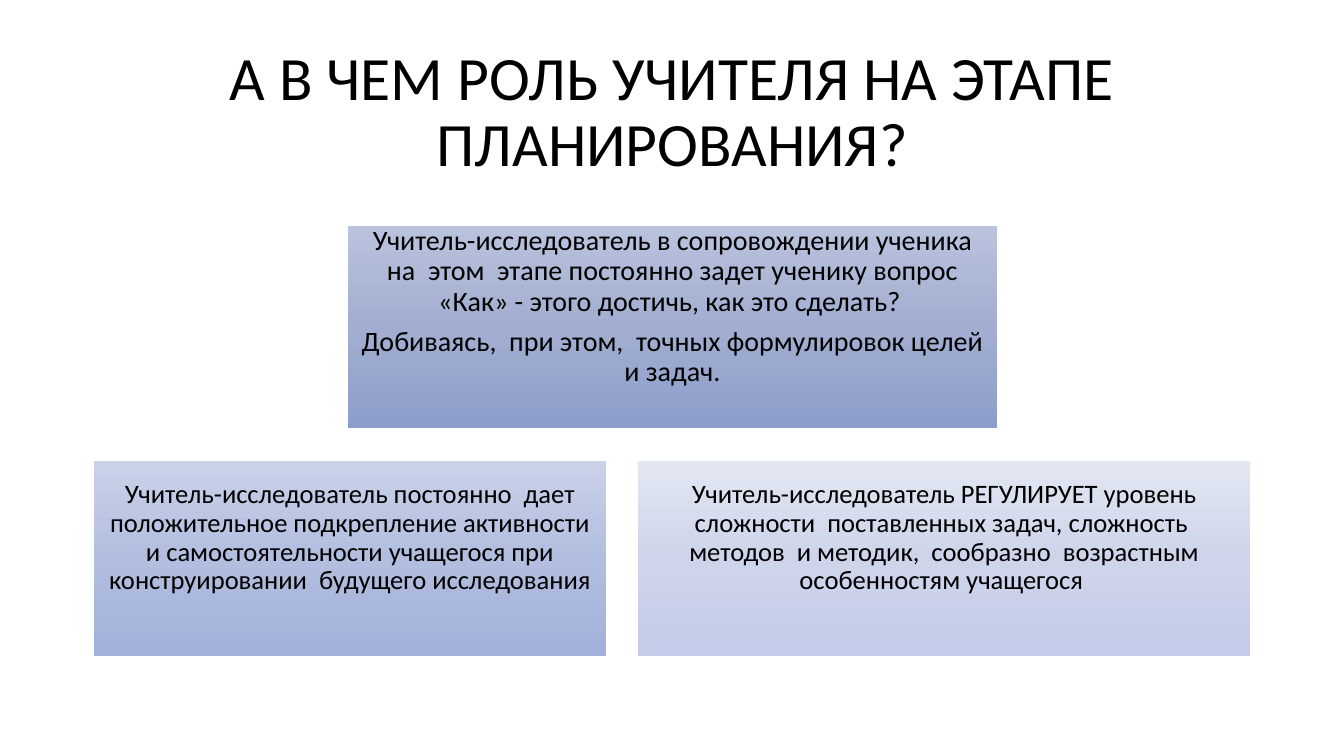
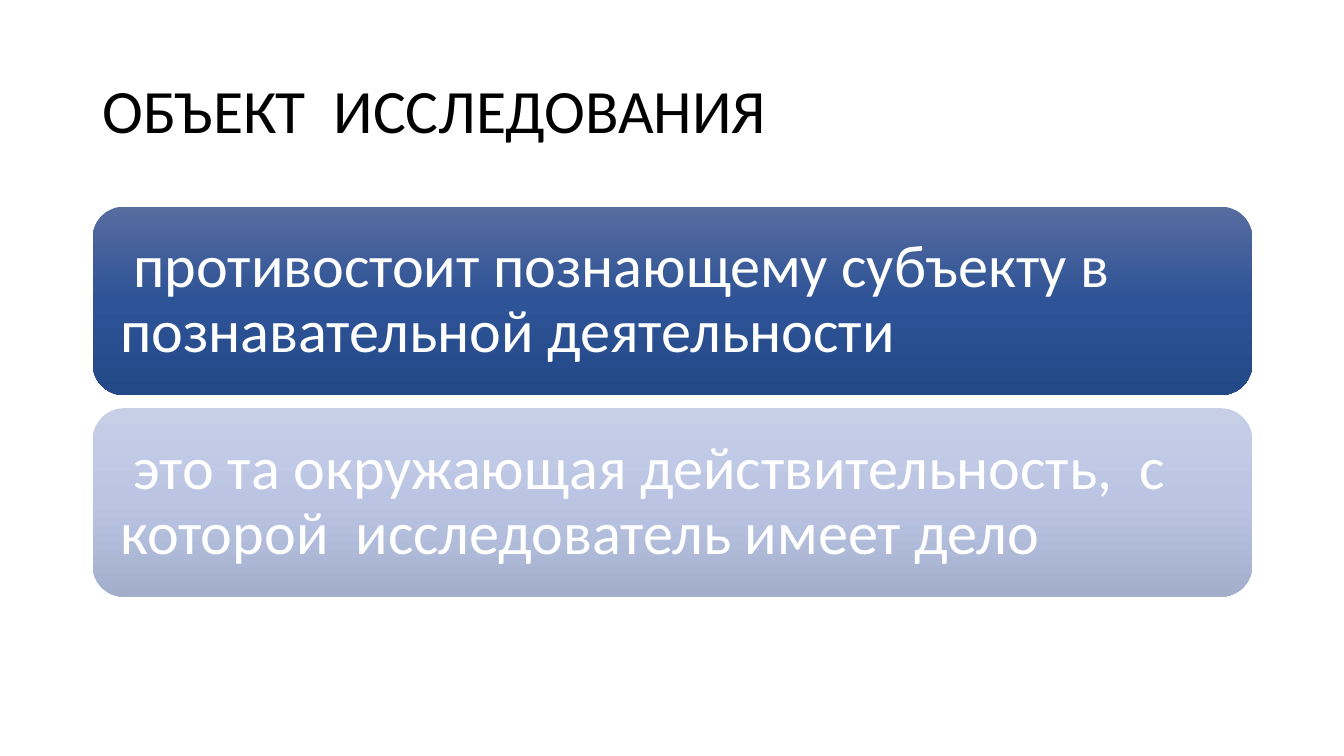
from copy import deepcopy
from dataclasses import dataclass

from pptx import Presentation
from pptx.dml.color import RGBColor
from pptx.enum.shapes import MSO_SHAPE
from pptx.enum.text import MSO_ANCHOR, MSO_AUTO_SIZE, PP_ALIGN
from pptx.oxml.ns import qn
from pptx.util import Inches, Pt

FONT = "Calibri"
COLORS = {"dark": "000000", "light": "FFFFFF"}
# Top, middle and bottom colour of each panel
GRADIENTS = {
    "question": ("BAC3DD", "A2AED1", "8D9ECC"),
    "support": ("CAD2E9", "B2BEDF", "A2B1DB"),
    "level": ("E3E7F3", "CED5EA", "C3CCE8"),
    "opposes": ("576C9F", "2E5396", "244989"),
    "reality": ("C7CFE7", "BBC5E3", "A3AECD"),
}
FRAME = {
    "word_wrap": True,
    "auto_size": MSO_AUTO_SIZE.NONE,
    "vertical_anchor": MSO_ANCHOR.MIDDLE,
}


@dataclass(frozen=True)
class PanelStyle:
    outline: MSO_SHAPE
    align: PP_ALIGN
    color: str
    insets: tuple[float, float, float, float]  # left, top, right, bottom


@dataclass(frozen=True)
class Panel:
    box: tuple[float, float, float, float]
    gradient: str
    size: int
    paragraphs: tuple[str, ...]


ROLE = PanelStyle(MSO_SHAPE.RECTANGLE, PP_ALIGN.CENTER, "dark", (0.08, 0, 0.08, 0.4))
DEFINITION = PanelStyle(MSO_SHAPE.ROUNDED_RECTANGLE, PP_ALIGN.LEFT, "light", (0.18,) * 4)

ROLE_PANELS = (
    Panel((3.45, 2.24, 6.44, 2.01), "question", 20, (
        "Учитель-исследователь в сопровождении ученика на  этом  этапе постоянно "
        "задет ученику вопрос «Как» - этого достичь, как это сделать? ",
        "Добиваясь,  при этом,  точных формулировок целей и задач.",
    )),
    Panel((0.93, 4.57, 5.08, 1.94), "support", 19, (
        "Учитель-исследователь постоянно  дает положительное подкрепление активности "
        "и самостоятельности учащегося при конструировании  будущего исследования",
    )),
    Panel((6.33, 4.57, 6.07, 1.94), "level", 19, (
        "Учитель-исследователь РЕГУЛИРУЕТ уровень сложности  поставленных задач, "
        "сложность  методов  и методик,  сообразно  возрастным особенностям учащегося ",
    )),
)

DEFINITIONS = (
    ("opposes", " противостоит познающему субъекту в познавательной деятельности"),
    ("reality", " это та окружающая действительность,  с которой  исследователь имеет дело"),
)
DEFINITION_TOP, DEFINITION_STEP = 2.05, 2.0
DEFINITION_PANELS = tuple(
    Panel((0.92, DEFINITION_TOP + i * DEFINITION_STEP, 11.5, 1.87), gradient, 43, (text,))
    for i, (gradient, text) in enumerate(DEFINITIONS)
)


def apply(target, values: dict) -> None:
    for name, value in values.items():
        setattr(target, name, value)


def write(frame, paragraphs: tuple[str, ...], size: int, color: str,
          align: PP_ALIGN, gap: float = 0) -> None:
    apply(frame, FRAME)
    for i, text in enumerate(paragraphs):
        paragraph = frame.paragraphs[0] if i == 0 else frame.add_paragraph()
        apply(paragraph, {"alignment": align, "line_spacing": 0.9,
                          "space_before": Pt(0), "space_after": Pt(gap)})
        run = paragraph.add_run()
        run.text = text
        apply(run.font, {"name": FONT, "size": Pt(size)})
        run.font.color.rgb = RGBColor.from_string(COLORS[color])


def fill_gradient(shape, colors: tuple[str, ...]) -> None:
    shape.fill.gradient()
    shape.fill.gradient_angle = 270  # top to bottom
    # The default gradient has two stops: add the third
    stop_list = next(shape.element.iter(qn("a:gsLst")))
    stop_list.append(deepcopy(stop_list[-1]))
    for i, (stop, color) in enumerate(zip(shape.fill.gradient_stops, colors)):
        stop.position = i / (len(colors) - 1)
        stop.color.rgb = RGBColor.from_string(color)


def add_panel(slide, panel: Panel, style: PanelStyle) -> None:
    shape = slide.shapes.add_shape(style.outline, *map(Inches, panel.box))
    shape.shadow.inherit = False
    shape.line.fill.background()
    fill_gradient(shape, GRADIENTS[panel.gradient])
    sides = ("margin_left", "margin_top", "margin_right", "margin_bottom")
    apply(shape.text_frame, dict(zip(sides, map(Inches, style.insets))))
    write(shape.text_frame, panel.paragraphs, panel.size, style.color,
          style.align, gap=round(panel.size * 0.35))


def add_slide(deck, title: str, title_align: PP_ALIGN,
              panels: tuple[Panel, ...], style: PanelStyle) -> None:
    slide = deck.slides.add_slide(deck.slide_layouts.get_by_name("Title Only"))
    heading = slide.shapes.title
    apply(heading, {"left": Inches(0.92), "top": Inches(0.4),
                    "width": Inches(11.5), "height": Inches(1.45)})
    write(heading.text_frame, (title,), 44, "dark", title_align)
    for panel in panels:
        add_panel(slide, panel, style)


def main() -> None:
    deck = Presentation()
    apply(deck, {"slide_width": Inches(13.33), "slide_height": Inches(7.5)})
    # The teacher's role
    add_slide(deck, "А В ЧЕМ РОЛЬ УЧИТЕЛЯ НА ЭТАПЕ ПЛАНИРОВАНИЯ?", PP_ALIGN.CENTER,
              ROLE_PANELS, ROLE)
    # The object of research
    add_slide(deck, "ОБЪЕКТ  ИССЛЕДОВАНИЯ", PP_ALIGN.LEFT, DEFINITION_PANELS, DEFINITION)
    deck.save("out.pptx")


if __name__ == "__main__":
    main()
